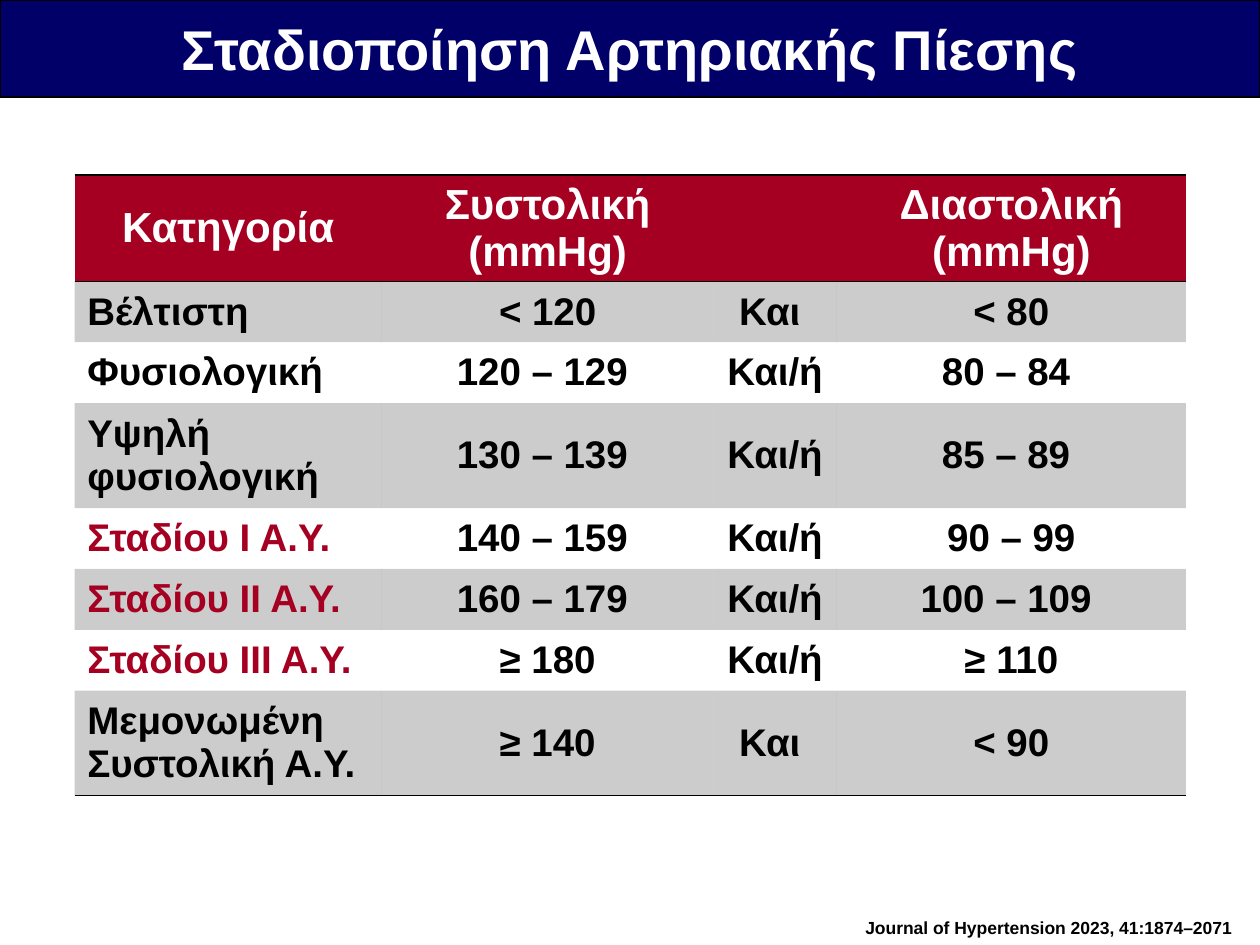
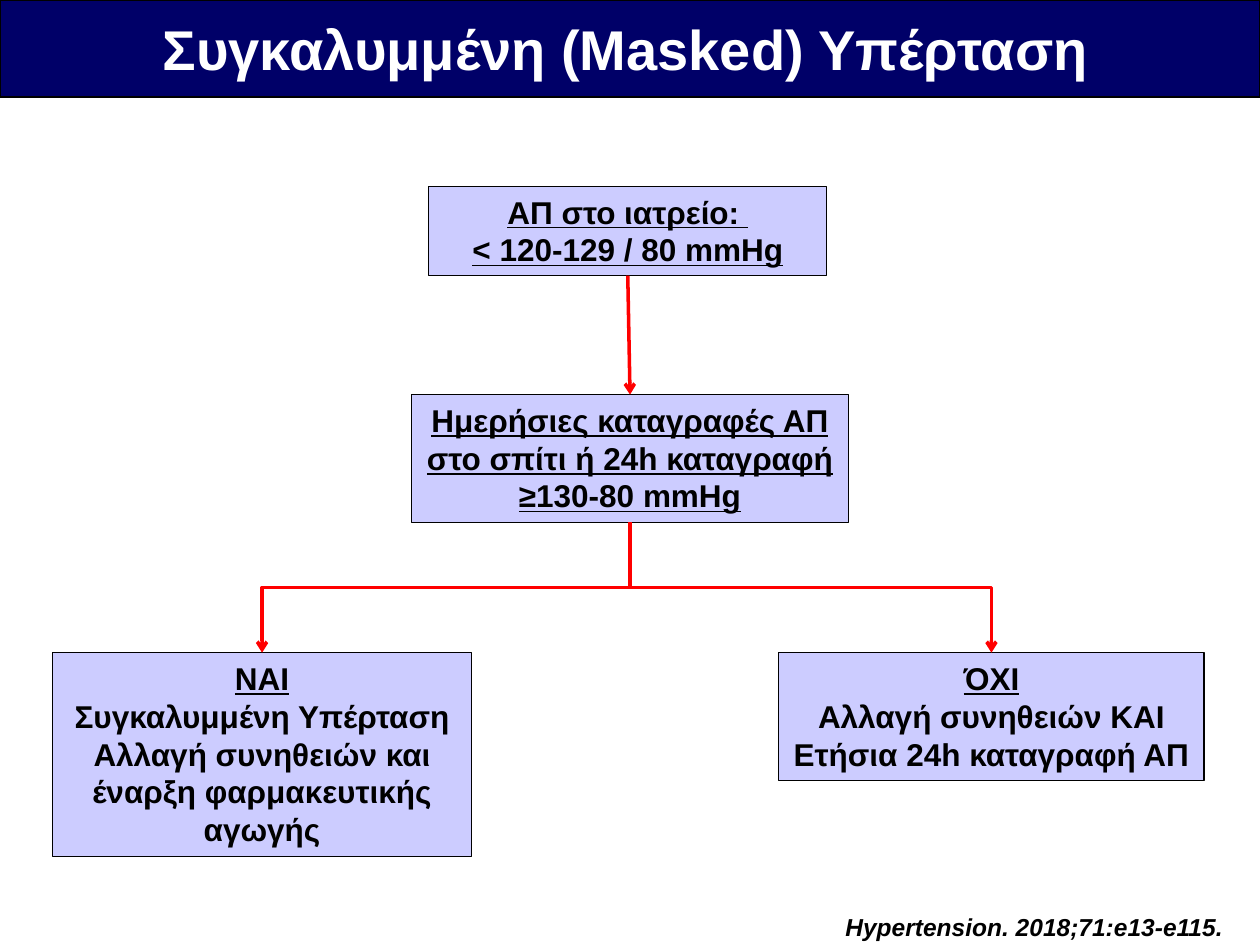
from dataclasses import dataclass

import pptx
import pptx.dml.color
import pptx.enum.shapes
import pptx.enum.text
import pptx.oxml
import pptx.oxml.ns
import pptx.util
from lxml import etree

Pt = pptx.util.Pt
qn = pptx.oxml.ns.qn
Align = pptx.enum.text.PP_ALIGN
Anchor = pptx.enum.text.MSO_ANCHOR
Connector = pptx.enum.shapes.MSO_CONNECTOR
BOTTOM, TOP = 2, 0  # connection sites of a rectangle
NO_GRID_STYLE = "{2D5ABB26-0587-4C30-8999-92F81FD0307C}"


@dataclass(frozen=True)
class Theme:
    font: str = "Arial"
    navy: str = "000068"
    crimson: str = "A50021"
    lavender: str = "CCCCFF"
    red: str = "FF0000"
    black: str = "000000"
    white: str = "FFFFFF"
    stripe_alpha: int = 20
    title_size: int = 32
    header_size: int = 24
    cell_size: int = 22
    box_size: int = 18


class Deck:
    """Holds the presentation, its theme and the current slide."""

    def __init__(self, theme):
        self.theme = theme
        self.presentation = pptx.Presentation()
        self.presentation.slide_width = Pt(720)
        self.presentation.slide_height = Pt(540)
        self.slide = None

    def color(self, value):
        return pptx.dml.color.RGBColor.from_string(value)

    def outline(self, shape, fill):
        shape.fill.solid()
        shape.fill.fore_color.rgb = self.color(fill)
        shape.line.color.rgb = self.color(self.theme.black)
        shape.line.width = Pt(0.75)

    def add_text(self, frame, lines, size, color, align=Align.LEFT,
                 underlined=0, italic=False):
        """Add one paragraph per line; the first few may be underlined."""
        for index, line in enumerate(lines):
            paragraph = frame.paragraphs[0] if index == 0 else frame.add_paragraph()
            paragraph.alignment = align
            run = paragraph.add_run()
            run.text = line
            font = run.font
            font.name, font.size, font.bold = self.theme.font, Pt(size), True
            font.italic = italic
            font.underline = index < underlined
            font.color.rgb = self.color(color)

    def add_slide(self, title, right_inset=7.2):
        layout = self.presentation.slide_layouts[5]
        self.slide = self.presentation.slides.add_slide(layout)
        band = self.slide.shapes.title
        band.left, band.top, band.width, band.height = Pt(0), Pt(0), Pt(720), Pt(55.5)
        self.outline(band, self.theme.navy)
        frame = band.text_frame
        frame.auto_size = pptx.enum.text.MSO_AUTO_SIZE.NONE
        frame.vertical_anchor = Anchor.MIDDLE
        frame.margin_right = Pt(right_inset)
        self.add_text(frame, [title], self.theme.title_size, self.theme.white, Align.CENTER)

    def add_citation(self, text, left, top, size, italic=False):
        box = self.slide.shapes.add_textbox(Pt(left), Pt(top), Pt(720 - left), Pt(19))
        box.text_frame.word_wrap = True
        self.add_text(box.text_frame, [text], size, self.theme.black, italic=italic)

    def add_box(self, lines, left, top, width, height, underlined):
        shape = self.slide.shapes.add_shape(
            pptx.enum.shapes.MSO_SHAPE.RECTANGLE, Pt(left), Pt(top), Pt(width), Pt(height))
        shape.shadow.inherit = False
        self.outline(shape, self.theme.lavender)
        shape.text_frame.word_wrap = True
        shape.text_frame.vertical_anchor = Anchor.TOP
        self.add_text(shape.text_frame, lines, self.theme.box_size, self.theme.black,
                      Align.CENTER, underlined)
        return shape

    def add_arrow(self, upper, lower, kind=Connector.STRAIGHT):
        arrow = self.slide.shapes.add_connector(kind, 0, 0, 0, 0)
        arrow.begin_connect(upper, BOTTOM)
        arrow.end_connect(lower, TOP)
        if kind == Connector.ELBOW:
            self.turn_downward(arrow)
        arrow.line.color.rgb = self.color(self.theme.red)
        arrow.line.width = Pt(2)
        etree.SubElement(arrow.line._get_or_add_ln(), qn("a:tailEnd"), type="arrow")
        etree.SubElement(arrow._element.spPr, qn("a:effectLst"))

    def turn_downward(self, arrow):
        """Rotate an elbow so that it leaves and arrives vertically."""
        leftward = arrow.end_x < arrow.begin_x
        width, height = arrow.width, arrow.height
        arrow.left += (width - height) // 2
        arrow.top += (height - width) // 2
        arrow.width, arrow.height = height, width
        transform = arrow._element.spPr.find(qn("a:xfrm"))
        transform.set("rot", str((90 if leftward else 270) * 60000))
        transform.set("flipH", "0" if leftward else "1")

    def add_table(self, rows, left, top, widths, heights):
        frame = self.slide.shapes.add_table(
            len(rows), len(widths), Pt(left), Pt(top), Pt(sum(widths)), Pt(sum(heights)))
        table = frame.table
        table.first_row = table.horz_banding = False
        table._tbl.tblPr.find(qn("a:tableStyleId")).text = NO_GRID_STYLE
        for column, width in zip(table.columns, widths):
            column.width = Pt(width)
        for row, height in zip(table.rows, heights):
            row.height = Pt(height)
        for row_index, values in enumerate(rows):
            for column_index, value in enumerate(values):
                self.fill_cell(table.cell(row_index, column_index), value,
                               row_index, column_index, len(rows) - 1)

    def fill_cell(self, cell, value, row, column, last_row):
        theme = self.theme
        header = row == 0
        cell.vertical_anchor = Anchor.MIDDLE
        # Borders come before the fill in the cell properties
        if header:
            self.add_border(cell, "a:lnT")
        if row in (0, last_row):
            self.add_border(cell, "a:lnB")
        if header or row % 2:
            cell.fill.solid()
            cell.fill.fore_color.rgb = self.color(theme.crimson if header else theme.black)
            if not header:
                tint = cell._tc.tcPr.find(qn("a:solidFill"))[0]
                etree.SubElement(tint, qn("a:alpha"), val=str(theme.stripe_alpha * 1000))
        else:
            cell.fill.background()
        if value:
            staged = column == 0 and value.startswith("Σταδίου")
            color = theme.white if header else theme.crimson if staged else theme.black
            size = theme.header_size if header else theme.cell_size
            align = Align.CENTER if header or column else Align.LEFT
            self.add_text(cell.text_frame, value.split("\n"), size, color, align)

    def add_border(self, cell, tag):
        line = etree.SubElement(cell._tc.get_or_add_tcPr(), qn(tag), w=str(int(Pt(1))))
        fill = etree.SubElement(line, qn("a:solidFill"))
        etree.SubElement(fill, qn("a:srgbClr"), val=self.theme.black)


def build_staging(deck):
    deck.add_slide("Σταδιοποίηση Αρτηριακής Πίεσης")
    rows = [
        ("Κατηγορία", "Συστολική\n(mmHg)", "", "Διαστολική\n(mmHg)"),
        ("Βέλτιστη", "< 120", "Και ", "< 80"),
        ("Φυσιολογική", "120 – 129 ", "Και/ή", "80 – 84 "),
        ("Υψηλή φυσιολογική", "130 – 139 ", "Και/ή", "85 – 89 "),
        ("Σταδίου Ι Α.Υ.", "140 – 159 ", "Και/ή", "90 – 99"),
        ("Σταδίου ΙΙ Α.Υ.", "160 – 179 ", "Και/ή", "100 – 109 "),
        ("Σταδίου ΙΙΙ Α.Υ.", "≥ 180", "Και/ή", "≥ 110"),
        ("Μεμονωμένη Συστολική Α.Υ.", "≥ 140", "Και ", "< 90"),
    ]
    single, double = 34.8, 60
    heights = [double, single, single, double, single, single, single, double]
    deck.add_table(rows, 42.7, 100, [175.5, 189.5, 70.5, 199.5], heights)
    deck.add_citation("Journal of Hypertension 2023, 41:1874–2071", 487.4, 520.5, 10)


def build_masked(deck):
    deck.add_slide("Συγκαλυμμένη (Masked) Υπέρταση", right_inset=12.2)

    # Decision boxes
    masked = deck.add_box(
        ["ΝΑΙ", "Συγκαλυμμένη Υπέρταση",
         "Αλλαγή συνηθειών και έναρξη φαρμακευτικής αγωγής"],
        30, 373, 239.5, 116.5, underlined=1)
    yearly = deck.add_box(
        ["ΌΧΙ", "Αλλαγή συνηθειών ΚΑΙ", "Ετήσια 24h καταγραφή ΑΠ"],
        445, 373, 243, 73, underlined=1)
    recordings = deck.add_box(
        ["Ημερήσιες καταγραφές ΑΠ στο σπίτι ή 24h καταγραφή ≥130-80 mmHg"],
        235.2, 225.5, 249.6, 73, underlined=1)
    office = deck.add_box(
        ["ΑΠ στο ιατρείο: ", "< 120-129 / 80 mmHg"],
        245, 106.5, 227.5, 51, underlined=2)

    # Flow
    deck.add_arrow(office, recordings)
    for outcome in (masked, yearly):
        deck.add_arrow(recordings, outcome, Connector.ELBOW)
    deck.add_citation("Hypertension. 2018;71:e13-e115.", 476, 517.7, 14, italic=True)


def main():
    deck = Deck(Theme())
    build_staging(deck)
    build_masked(deck)
    deck.presentation.save("out.pptx")


if __name__ == "__main__":
    main()
